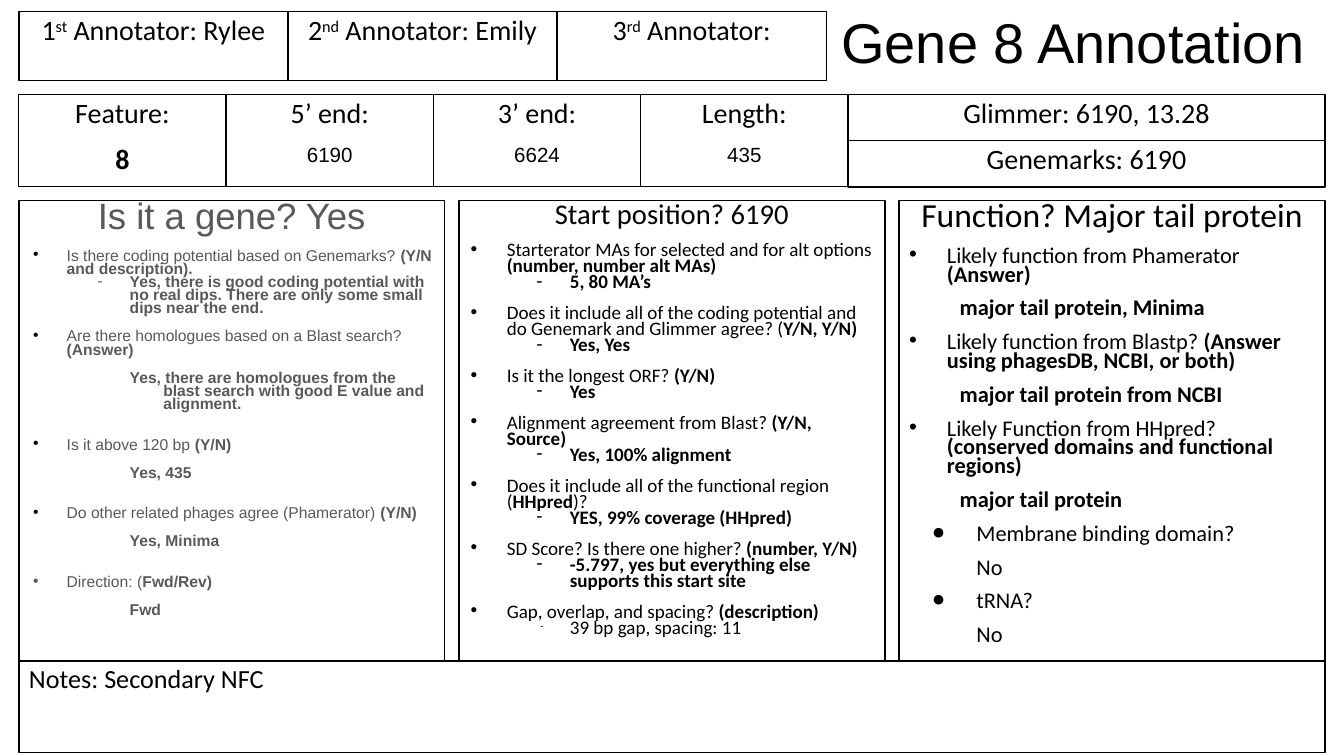
import dataclasses
import typing

import lxml.etree
import pptx
import pptx.dml.color
import pptx.enum.shapes
import pptx.enum.text
import pptx.oxml.ns
import pptx.util

Pt = pptx.util.Pt
ALIGN = pptx.enum.text.PP_ALIGN
ANCHOR = pptx.enum.text.MSO_ANCHOR

COLORS = {"black": "000000", "gray": "595959"}
LEFT, WIDTH = 10.1, 699.8
COLUMN_TOP, COLUMN_WIDTH, COLUMN_HEIGHT = 107.3, 228.2, 246.9
COLUMN_PITCH = (WIDTH - COLUMN_WIDTH) / 2
ANNOTATOR_WIDTH, FEATURE_WIDTH = 144.2, 111.05


class Box(typing.NamedTuple):
    left: float
    top: float
    width: float
    height: float


@dataclasses.dataclass(frozen=True)
class Layout:
    """Indents and gap of one kind of list line."""
    margin: float
    indent: float = 0
    before: float = 8
    bullet: str = ""
    bullet_color: str = "black"
    bullet_percent: int = 100


class Line(typing.NamedTuple):
    layout: Layout
    text: str


@dataclasses.dataclass(frozen=True)
class Column:
    heading: str
    heading_size: float
    size: float
    font: str
    color: str
    lines: list[Line]


GENE_QUESTION = Layout(20.2, -18, bullet="•")
GENE_NEXT = dataclasses.replace(GENE_QUESTION, before=14.8)
GENE_LAST = dataclasses.replace(GENE_NEXT, bullet_color="gray")
GENE_DASH = Layout(54, -17.3, 0, "-", "gray")
GENE_ANSWER = Layout(72, -18)
START_QUESTION = Layout(20.2, -19.4, bullet="•")
START_ANSWER = Layout(54, -18, 0, "-")
START_LAST = dataclasses.replace(START_ANSWER, indent=-15.8, bullet_percent=50)
FUNCTION_QUESTION = Layout(20.2, -20.2, bullet="•")
FUNCTION_ANSWER = Layout(27)
DOMAIN_QUESTION = Layout(36, -23.8, bullet="●")
DOMAIN_ANSWER = Layout(36)

# In all texts *...* is bold and ^...^ is superscript.
COLUMNS = [
    Column("Is it a gene? Yes", 19.6, 8.4, "Arial", "gray", [
        Line(GENE_QUESTION, "Is there coding potential based on Genemarks? *(Y/N and description).*"),
        Line(GENE_DASH, "*Yes, there is good coding potential with no real dips. "
                        "There are only some small dips near the end.*"),
        Line(GENE_QUESTION, "Are there homologues based on a Blast search? *(Answer)*"),
        Line(GENE_ANSWER, "*Yes, there are homologues from the blast search "
                          "with good E value and alignment.*"),
        Line(GENE_NEXT, "Is it above 120 bp *(Y/N)*"),
        Line(GENE_ANSWER, "*Yes, 435*"),
        Line(GENE_NEXT, "Do other related phages agree (Phamerator)* (Y/N)*"),
        Line(GENE_ANSWER, "*Yes, Minima*"),
        Line(GENE_LAST, "Direction: (*Fwd/Rev)*"),
        Line(GENE_ANSWER, "*Fwd*"),
    ]),
    Column("Start position? 6190", 15.3, 10.2, "Calibri", "black", [
        Line(START_QUESTION, "Starterator MAs for selected and for alt options* (number, number alt MAs)*"),
        Line(START_ANSWER, "*5, 80 MA’s*"),
        Line(START_QUESTION, "Does it include all of the coding potential and do Genemark "
                             "and Glimmer agree? (*Y/N, Y/N)*"),
        Line(START_ANSWER, "*Yes, Yes*"),
        Line(START_QUESTION, "Is it the longest ORF? *(Y/N)*"),
        Line(START_ANSWER, "*Yes*"),
        Line(START_QUESTION, "Alignment agreement from Blast? *(Y/N, Source)*"),
        Line(START_ANSWER, "*Yes, 100% alignment*"),
        Line(START_QUESTION, "Does it include all of the functional region (*HHpred*)?"),
        Line(START_ANSWER, "*YES, 99% coverage (HHpred)*"),
        Line(START_QUESTION, "SD Score? Is there one higher? *(number, Y/N)*"),
        Line(START_ANSWER, "*-5.797, yes but everything else supports this start site*"),
        Line(START_QUESTION, "Gap, overlap, and spacing? *(description)*"),
        Line(START_LAST, "39 bp gap, spacing: 11"),
    ]),
    Column("Function? Major tail protein", 18, 12, "Calibri", "black", [
        Line(FUNCTION_QUESTION, "Likely function from Phamerator *(Answer)*"),
        Line(FUNCTION_ANSWER, "*major tail protein, Minima*"),
        Line(FUNCTION_QUESTION, "Likely function from Blastp? *(Answer using phagesDB, NCBI, or both)*"),
        Line(FUNCTION_ANSWER, "*major tail protein from NCBI*"),
        Line(FUNCTION_QUESTION, "Likely Function from HHpred? *(conserved domains and functional regions)*"),
        Line(FUNCTION_ANSWER, "*major tail protein*"),
        Line(DOMAIN_QUESTION, "Membrane binding domain?"),
        Line(DOMAIN_ANSWER, "No"),
        Line(DOMAIN_QUESTION, "tRNA?"),
        Line(DOMAIN_ANSWER, "No"),
    ]),
]
ANNOTATORS = ["1^st^ Annotator: Rylee", "2^nd^ Annotator: Emily", "3^rd^ Annotator:"]
FEATURES = [("Feature:", "*8*", 15, "Calibri"), ("5’ end:", "6190", 11, "Arial"),
            ("3’ end:", "6624", 11, "Arial"), ("Length:", "435", 11, "Arial")]
PREDICTIONS = ["Glimmer: 6190, 13.28", "Genemarks: 6190"]


def add_text(frame, text: str, *, size: float = 15, font: str = "Calibri", color: str = "black",
             align=ALIGN.CENTER, spacing: float = 0.9, layout: Layout = Layout(0, before=0)) -> None:
    """Fill the frame's empty first paragraph, or add a paragraph after the others."""
    paragraph = frame.paragraphs[0] if not frame.text else frame.add_paragraph()
    paragraph.alignment = align
    paragraph.line_spacing = spacing
    paragraph.space_before = Pt(layout.before)
    paragraph.space_after = Pt(0)
    set_bullet(paragraph, layout)
    for bold_index, part in enumerate(text.split("*")):
        for raised_index, piece in enumerate(part.split("^")):
            if not piece:
                continue
            run = paragraph.add_run()
            run.text = piece
            run.font.size = Pt(size)
            run.font.name = font
            run.font.bold = bold_index % 2 == 1
            run.font.color.rgb = pptx.dml.color.RGBColor.from_string(COLORS[color])
            if raised_index % 2:
                run._r.get_or_add_rPr().set("baseline", "30000")


def set_bullet(paragraph, layout: Layout) -> None:
    properties = paragraph._p.get_or_add_pPr()
    properties.set("marL", str(int(Pt(layout.margin))))
    properties.set("indent", str(int(Pt(layout.indent))))

    def add(parent, tag: str, **attributes: str):
        return lxml.etree.SubElement(parent, pptx.oxml.ns.qn(tag), **attributes)

    if not layout.bullet:
        add(properties, "a:buNone")
        return
    add(add(properties, "a:buClr"), "a:srgbClr", val=COLORS[layout.bullet_color])
    add(properties, "a:buSzPct", val=str(layout.bullet_percent * 1000))
    add(properties, "a:buFont", typeface="Arial")
    add(properties, "a:buChar", char=layout.bullet)


def prepare(shape, box: Box, anchor=ANCHOR.TOP):
    """Place a shape and return its text frame, ready for text."""
    shape.left, shape.top, shape.width, shape.height = map(Pt, box)
    frame = shape.text_frame
    frame.word_wrap = True
    frame.auto_size = pptx.enum.text.MSO_AUTO_SIZE.NONE
    frame.vertical_anchor = anchor
    frame.margin_left = frame.margin_right = Pt(5.4)
    frame.margin_top = frame.margin_bottom = Pt(2.7)
    return frame


def outline(shape) -> None:
    shape.fill.background()
    shape.line.color.rgb = pptx.dml.color.RGBColor.from_string(COLORS["black"])
    shape.line.width = Pt(0.75)


def add_box(slide, box: Box):
    shape = slide.shapes.add_shape(pptx.enum.shapes.MSO_SHAPE.RECTANGLE, *map(Pt, box))
    shape.shadow.inherit = False
    outline(shape)
    return prepare(shape, box)


def fill_column(frame, column: Column) -> None:
    style = {"font": column.font, "color": column.color, "spacing": 0.7}
    add_text(frame, column.heading, size=column.heading_size, **style)
    for line in column.lines:
        add_text(frame, line.text, size=column.size, align=ALIGN.LEFT, layout=line.layout, **style)


def main() -> None:
    presentation = pptx.Presentation()
    presentation.slide_width, presentation.slide_height = Pt(720), Pt(405)
    slide = presentation.slides.add_slide(presentation.slide_layouts[0])
    title_frame = prepare(slide.shapes.title, Box(440, 4.3, 270, 38.9), ANCHOR.BOTTOM)
    add_text(title_frame, "Gene 8 Annotation", size=30, font="Arial")

    for index, column in enumerate(COLUMNS):
        box = Box(LEFT + index * COLUMN_PITCH, COLUMN_TOP, COLUMN_WIDTH, COLUMN_HEIGHT)
        if index == 0:
            outline(slide.placeholders[1])
            frame = prepare(slide.placeholders[1], box)
        else:
            frame = add_box(slide, box)
        fill_column(frame, column)

    for index, (label, value, size, font) in enumerate(FEATURES):
        frame = add_box(slide, Box(LEFT + index * FEATURE_WIDTH, 50.8, FEATURE_WIDTH, 49.2))
        add_text(frame, label)
        add_text(frame, value, size=size, font=font, layout=Layout(0))

    prediction_left = LEFT + len(FEATURES) * FEATURE_WIDTH
    for index, text in enumerate(PREDICTIONS):
        box = Box(prediction_left, 50.6 + index * 24.8, LEFT + WIDTH - prediction_left, 24.8)
        add_text(add_box(slide, box), text)

    for index, text in enumerate(ANNOTATORS):
        box = Box(LEFT + index * ANNOTATOR_WIDTH, 6.3, ANNOTATOR_WIDTH, 36.7)
        add_text(add_box(slide, box), text)

    notes_frame = add_box(slide, Box(LEFT, COLUMN_TOP + COLUMN_HEIGHT, WIDTH, 49))
    add_text(notes_frame, "Notes: Secondary NFC", size=14, align=ALIGN.LEFT)
    presentation.save("out.pptx")


if __name__ == "__main__":
    main()
